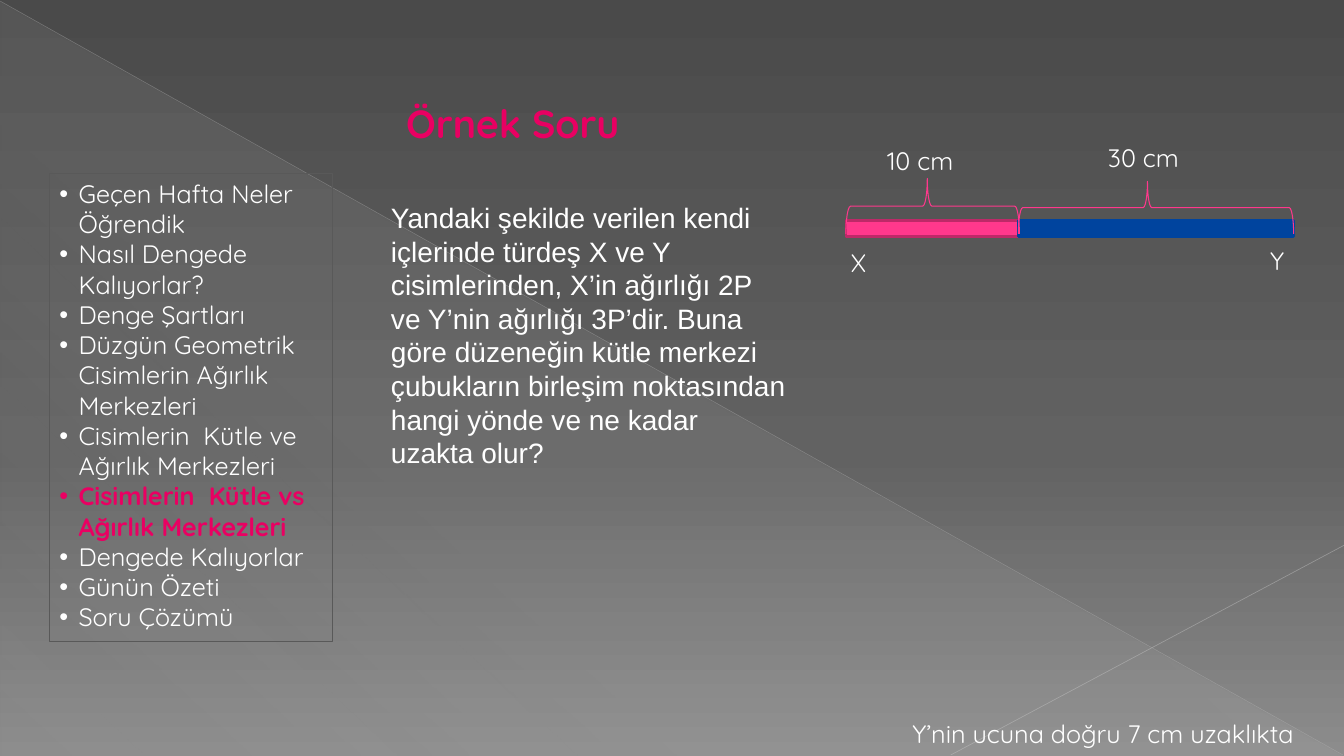
from lxml import etree
from pptx import Presentation
from pptx.dml.color import RGBColor
from pptx.enum.shapes import MSO_CONNECTOR, MSO_SHAPE
from pptx.enum.text import MSO_ANCHOR, MSO_AUTO_SIZE, PP_ALIGN
from pptx.oxml.ns import qn
from pptx.util import Inches, Pt

RECT, TRIANGLE, BRACE = MSO_SHAPE.RECTANGLE, MSO_SHAPE.RIGHT_TRIANGLE, MSO_SHAPE.LEFT_BRACE
STRAIGHT = MSO_CONNECTOR.STRAIGHT
GROW, TOP, LEFT = MSO_AUTO_SIZE.SHAPE_TO_FIT_TEXT, MSO_ANCHOR.TOP, PP_ALIGN.LEFT
PINK, MAGENTA, BLUE, WHITE = "FF388C", "E90062", "00449E", "FFFFFF"
LABEL = {"size": Pt(18), "name": "Quicksand", "bold": False}
TITLE = {"size": Pt(28), "name": "Quicksand", "bold": True}
BODY = {"size": Pt(20), "name": "Arial", "bold": False}
QUESTION = (
    "Yandaki şekilde verilen kendi içlerinde türdeş X ve Y cisimlerinden, "
    "X’in ağırlığı 2P ve Y’nin ağırlığı 3P’dir. Buna göre düzeneğin kütle merkezi "
    "çubukların birleşim noktasından hangi yönde ve ne kadar uzakta olur?"
)
TOPICS = [
    "Geçen Hafta Neler Öğrendik",
    "Nasıl Dengede Kalıyorlar?",
    "Denge Şartları",
    "Düzgün Geometrik Cisimlerin Ağırlık Merkezleri",
    "Cisimlerin  Kütle ve Ağırlık Merkezleri",
    "Cisimlerin  Kütle vs Ağırlık Merkezleri",
    "Dengede Kalıyorlar",
    "Günün Özeti",
    "Soru Çözümü",
]
CURRENT = 5


def rgb(color):
    """Return the colour for a hex string."""
    return RGBColor.from_string(color)


def set_alpha(clr, percent):
    """Set the opacity of a colour element."""
    etree.SubElement(clr, qn("a:alpha"), val=str(percent * 1000))


def set_gradient(fill, element, stops, angle):
    """Give a fill linear gradient stops of position, colour and opacity."""
    fill.gradient()
    grad = element.find(".//" + qn("a:gradFill"))
    for child in list(grad):
        grad.remove(child)
    gs_list = etree.SubElement(grad, qn("a:gsLst"))
    for pos, color, alpha in stops:
        gs = etree.SubElement(gs_list, qn("a:gs"), pos=str(pos * 1000))
        clr = etree.SubElement(gs, qn("a:srgbClr"), val=color)
        if alpha < 100:
            set_alpha(clr, alpha)
    etree.SubElement(grad, qn("a:lin"), ang=str(angle * 60000), scaled="0")


def add_shape(s, kind, box, fill=None, line=None, width=0.75):
    """Add a preset shape without shadow."""
    shape = s.shapes.add_shape(kind, *map(Inches, box))
    shape.shadow.inherit = False
    if fill:
        shape.fill.solid()
        shape.fill.fore_color.rgb = rgb(fill)
    else:
        shape.fill.background()
    if line:
        shape.line.color.rgb = rgb(line)
        shape.line.width = Pt(width)
    else:
        shape.line.fill.background()
    return shape


def add_line(s, start, end, color, width, alpha):
    """Add a thin translucent line."""
    line = s.shapes.add_connector(STRAIGHT, *map(Inches, start + end))
    line.line.color.rgb = rgb(color)
    line.line.width = Pt(width)
    set_alpha(line.element.find(".//" + qn("a:srgbClr")), alpha)
    etree.SubElement(line.element.spPr, qn("a:effectLst"))


def set_frame(tf):
    """Make a text frame wrap, grow and start at its top."""
    for name, value in {"word_wrap": True, "auto_size": GROW, "vertical_anchor": TOP}.items():
        setattr(tf, name, value)


def write(p, text, style, color):
    """Write one styled run into a paragraph."""
    p.alignment = LEFT
    r = p.add_run()
    r.text = text
    for name, value in style.items():
        setattr(r.font, name, value)
    r.font.color.rgb = rgb(color)


def add_text(s, box, text, style=LABEL, color=WHITE):
    """Add a one-paragraph text box."""
    tf = s.shapes.add_textbox(*map(Inches, box)).text_frame
    set_frame(tf)
    write(tf.paragraphs[0], text, style, color)


def add_backdrop(s, w, h):
    """Draw the gradient background, the triangle and the crossing lines."""
    fill = s.background.fill
    set_gradient(fill, s.element, [(0, "4A4A4A", 100), (60, "626262", 100), (100, "8C8C8C", 100)], 90)
    shape = add_shape(s, TRIANGLE, (0.01, 0.02, w - 0.02, h - 0.02))
    set_gradient(shape.fill, shape.element, [(0, "D2D2D2", 10), (70, "D2D2D2", 8), (100, "D2D2D2", 1)], 133)
    add_line(s, (0, 0.01), (w - 0.01, h - 0.01), "BFBFBF", 0.39, 35)
    add_line(s, (w, 5.41), (w - 3.9, h - 0.01), "C6C6C6", 0.47, 45)


def add_agenda(s, box):
    """List the topics in a frame with the current one highlighted."""
    tf = add_shape(s, RECT, box, line="595959").text_frame
    set_frame(tf)
    for i, topic in enumerate(TOPICS):
        p = tf.paragraphs[0] if i == 0 else tf.add_paragraph()
        active = i == CURRENT
        write(p, topic, {**LABEL, "bold": active}, MAGENTA if active else WHITE)
        pPr = p._p.get_or_add_pPr()
        pPr.set("marL", str(Inches(0.19)))
        pPr.set("indent", str(Inches(-0.19)))
        etree.SubElement(pPr, qn("a:buFont"), typeface="Arial")
        etree.SubElement(pPr, qn("a:buChar"), char="•")


def add_brace(s, x, bottom, width, depth):
    """Add a brace that opens downwards over a bar."""
    box = (x + (width - depth) / 2, bottom - (depth + width) / 2, depth, width)
    brace = add_shape(s, BRACE, box, line=PINK)
    brace.rotation = 90
    brace.adjustments[0] = 0.083
    brace.adjustments[1] = 0.531


def add_rods(s, x, y):
    """Draw the two joined rods with their braces, lengths and names."""
    join = x + 1.71
    add_shape(s, RECT, (x, y, 1.72, 0.16), PINK, "BD2968", 2)
    add_shape(s, RECT, (join, y, 2.73, 0.16), BLUE, BLUE, 2)
    add_brace(s, x, y + 0.13, 1.72, 0.55)
    add_brace(s, join, y + 0.13, 2.73, 0.52)
    add_text(s, (x + 0.31, y - 0.8, 1.72, 0.4), "10 cm")
    add_text(s, (join + 0.79, y - 0.83, 1.95, 0.4), "30 cm")
    add_text(s, (x - 0.05, y + 0.21, 0.32, 0.4), "X")
    add_text(s, (join + 2.4, y + 0.19, 0.47, 0.4), "Y")


def main():
    """Build and save the slide."""
    prs = Presentation()
    w, h = 13.33, 7.5
    prs.slide_width, prs.slide_height = Inches(w), Inches(h)
    s = prs.slides.add_slide(prs.slide_layouts[6])
    add_backdrop(s, w, h)
    add_text(s, (3.93, 0.94, 5.39, 0.57), "Örnek Soru", TITLE, MAGENTA)
    add_text(s, (3.78, 1.94, 4.14, 2.79), QUESTION, BODY)
    add_rods(s, 8.39, 2.19)
    add_text(s, (8.95, 7.08, 4.5, 0.4), "Y’nin ucuna doğru 7 cm uzaklıkta")
    add_agenda(s, (0.49, 1.72, 2.81, 4.64))
    prs.save("out.pptx")


if __name__ == "__main__":
    main()
